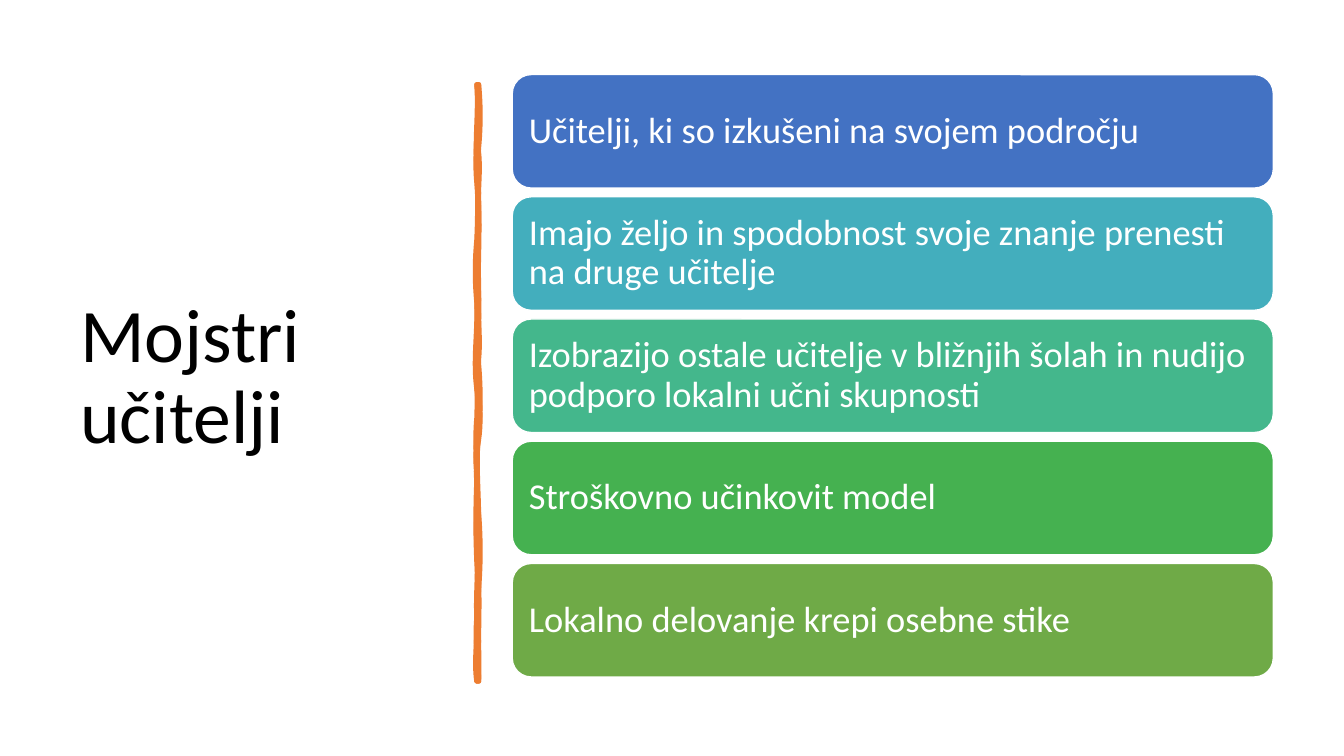
from lxml import etree
from pptx import Presentation
from pptx.dml.color import RGBColor
from pptx.enum.shapes import MSO_SHAPE
from pptx.enum.text import MSO_ANCHOR, PP_ALIGN
from pptx.oxml.ns import qn
from pptx.util import Cm, Pt

MIDDLE = MSO_ANCHOR.MIDDLE
LEFT = PP_ALIGN.LEFT
RECTANGLE = MSO_SHAPE.RECTANGLE
ROUNDED = MSO_SHAPE.ROUNDED_RECTANGLE

BLACK = RGBColor(0x00, 0x00, 0x00)
WHITE = RGBColor(0xFF, 0xFF, 0xFF)
ORANGE = RGBColor(0xED, 0x7D, 0x31)
BLUE = RGBColor(0x43, 0x72, 0xC3)
TEAL = RGBColor(0x43, 0xAE, 0xBD)
MINT = RGBColor(0x44, 0xB7, 0x8C)
GREEN = RGBColor(0x45, 0xB1, 0x50)
OLIVE = RGBColor(0x6F, 0xAA, 0x47)
FONT = "Calibri"

# Content
TITLE = "Mojstri učitelji"
CARDS = [
    ("Učitelji, ki so izkušeni na svojem področju", BLUE),
    ("Imajo željo in spodobnost svoje znanje prenesti na druge učitelje", TEAL),
    ("Izobrazijo ostale učitelje v bližnjih šolah in nudijo podporo lokalni učni skupnosti", MINT),
    ("Stroškovno učinkovit model", GREEN),
    ("Lokalno delovanje krepi osebne stike", OLIVE),
]

# Hand-drawn divider: each bend is (end height, first bulge, second bulge) in cm
DIVIDER_TOP, DIVIDER_BOTTOM = 2.13, 17.17
DIVIDER_RIGHT, DIVIDER_LEFT = 12.07, 12.01
OUTLINE_DOWN = [
    (3.71, 0.05, 0.05), (5.74, -0.05, 0.03), (7.47, -0.03, 0), (9.04, -0.03, 0.05),
    (11.07, -0.05, 0.1), (12.95, -0.1, -0.08), (14.83, 0.05, 0.05), (17.17, -0.05, 0.03)]
OUTLINE_UP = [
    (15.57, 0.03, -0.05), (14.15, 0.03, 0.03), (12.12, -0.03, -0.03), (10.54, 0, -0.05),
    (8.51, 0.03, -0.03), (6.35, 0.03, -0.03), (4.6, 0.03, 0.05), (2.13, -0.08, 0.1)]
FILLED_DOWN = [
    (3.86, 0, -0.08), (5.28, 0.05, -0.03), (7.47, 0.03, -0.03), (9.19, 0.03, -0.05),
    (10.92, 0.05, 0.05), (13.11, -0.08, 0), (14.68, 0, -0.03), (17.17, 0.03, -0.03)]
FILLED_UP = [
    (15.57, -0.08, 0.03), (13.69, -0.03, 0.05), (11.96, -0.05, 0.08), (9.8, -0.08, 0.1),
    (7.62, -0.1, 0.03), (6.05, -0.05, -0.05), (4.17, 0.03, 0.03), (2.13, -0.05, 0.05)]
STROKES = [("none", OUTLINE_DOWN, OUTLINE_UP), ("norm", FILLED_DOWN, FILLED_UP)]

# Layout in cm
PAGE_WIDTH, PAGE_HEIGHT = 33.87, 19.05
CARD_LEFT, CARD_TOP, CARD_WIDTH, CARD_HEIGHT = 12.91, 1.88, 19.18, 2.86
CARD_PITCH = 3.08
CARD_INSET = 0.28


def write(shape, text, size, color, inset_x, inset_y):
    frame = shape.text_frame
    frame.word_wrap = True
    frame.vertical_anchor = MIDDLE
    frame.margin_left = frame.margin_right = Cm(inset_x)
    frame.margin_top = frame.margin_bottom = Cm(inset_y)
    frame.text = text
    para = frame.paragraphs[0]
    para.alignment = LEFT
    para.line_spacing = 0.9
    font = para.runs[0].font
    font.name, font.size, font.color.rgb = FONT, Pt(size), color


def paint(shape, color):
    shape.shadow.inherit = False
    shape.fill.solid()
    shape.fill.fore_color.rgb = color


def add_command(path, name, points):
    command = etree.SubElement(path, qn(name))
    for x, y in points:
        point = etree.SubElement(command, qn("a:pt"))
        point.set("x", str(Cm(x - DIVIDER_LEFT)))
        point.set("y", str(Cm(y - DIVIDER_TOP)))


def add_edge(path, x, start, bends):
    for end, first, second in bends:
        third = (end - start) / 3
        add_command(path, "a:cubicBezTo", [
            (x + first, start + third), (x + second, end - third), (x, end)])
        start = end


def add_divider(page):
    builder = page.shapes.build_freeform(Cm(DIVIDER_LEFT), Cm(DIVIDER_TOP))
    builder.add_line_segments([(Cm(DIVIDER_RIGHT), Cm(DIVIDER_BOTTOM))])
    divider = builder.convert_to_shape()
    paint(divider, ORANGE)
    divider.line.color.rgb = ORANGE
    divider.line.width = Pt(3.25)
    etree.SubElement(divider.line._get_or_add_ln(), qn("a:round"))

    # Curved outlines
    paths = divider._element.spPr.find(".//" + qn("a:pathLst"))
    paths.clear()
    for fill, down, up in STROKES:
        path = etree.SubElement(paths, qn("a:path"))
        path.set("w", str(divider.width))
        path.set("h", str(divider.height))
        path.set("fill", fill)
        add_command(path, "a:moveTo", [(DIVIDER_RIGHT, DIVIDER_TOP)])
        add_edge(path, DIVIDER_RIGHT, DIVIDER_TOP, down)
        add_command(path, "a:lnTo", [(DIVIDER_LEFT, DIVIDER_BOTTOM)])
        add_edge(path, DIVIDER_LEFT, DIVIDER_BOTTOM, up)
        etree.SubElement(path, qn("a:close"))


def main():
    deck = Presentation()
    deck.slide_width, deck.slide_height = Cm(PAGE_WIDTH), Cm(PAGE_HEIGHT)
    page = deck.slides.add_slide(deck.slide_layouts[6])

    # Backdrop
    backdrop = page.shapes.add_shape(RECTANGLE, 0, 0, Cm(PAGE_WIDTH), Cm(PAGE_HEIGHT))
    paint(backdrop, WHITE)
    backdrop.line.fill.background()

    # Title
    box = page.shapes.add_textbox(Cm(1.77), Cm(1.78), Cm(9.5), Cm(15.52))
    write(box, TITLE, 54, BLACK, 0.25, 0.13)

    add_divider(page)

    # Cards
    for index, (text, color) in enumerate(CARDS):
        top = CARD_TOP + index * CARD_PITCH
        card = page.shapes.add_shape(
            ROUNDED, Cm(CARD_LEFT), Cm(top), Cm(CARD_WIDTH), Cm(CARD_HEIGHT))
        paint(card, color)
        card.line.color.rgb = WHITE
        card.line.width = Pt(1)
        write(card, text, 26, WHITE, CARD_INSET, CARD_INSET)

    deck.save("out.pptx")


if __name__ == "__main__":
    main()
